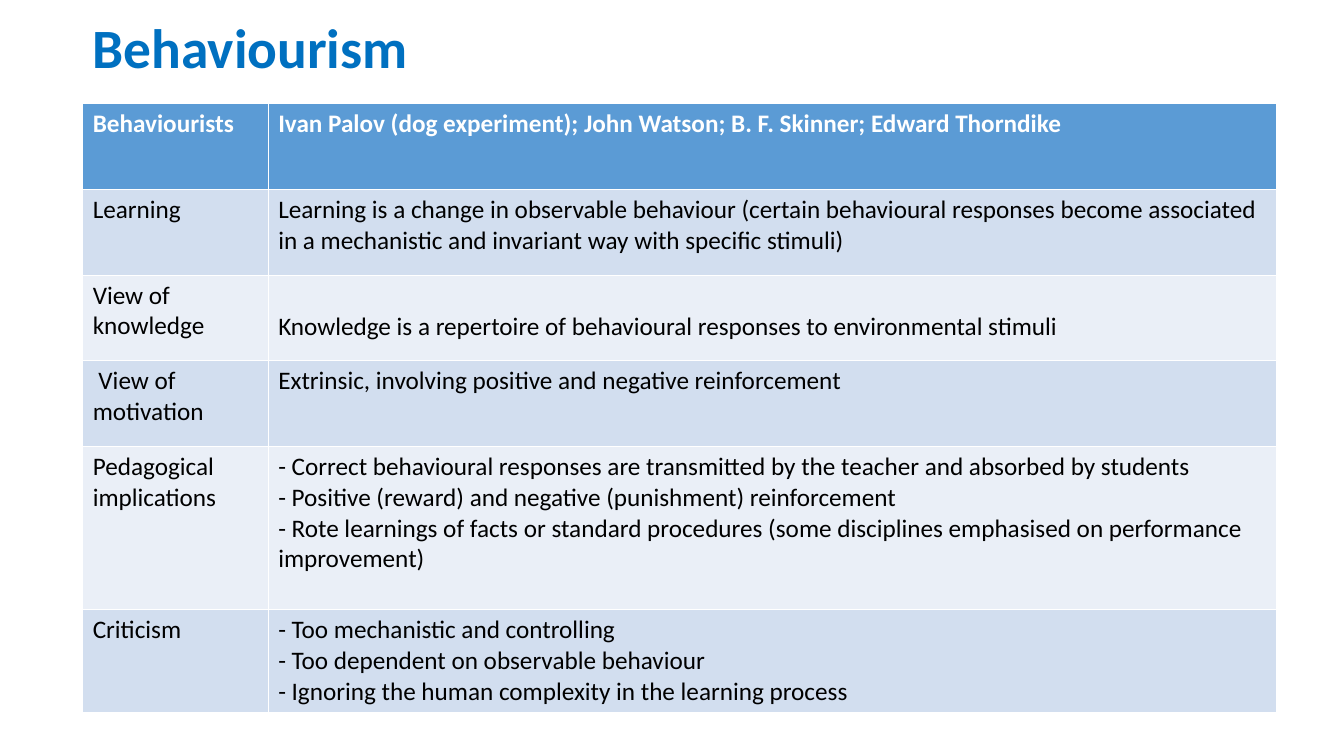
"""Build the Behaviourism summary slide with its two-column table."""
import pptx
import pptx.dml.color
import pptx.enum.text
import pptx.util

RGBColor = pptx.dml.color.RGBColor
Inches = pptx.util.Inches

TITLE = "Behaviourism"
ROWS = [
    ("Behaviourists", ["Ivan Palov (dog experiment); John Watson; B. F. Skinner; Edward Thorndike"]),
    ("Learning", ["Learning is a change in observable behaviour (certain behavioural responses "
                  "become associated in a mechanistic and invariant way with specific stimuli)"]),
    ("View of knowledge", ["Knowledge is a repertoire of behavioural responses to environmental stimuli"]),
    (" View of motivation", ["Extrinsic, involving positive and negative reinforcement"]),
    ("Pedagogical implications", [
        "- Correct behavioural responses are transmitted by the teacher and absorbed by students",
        "- Positive (reward) and negative (punishment) reinforcement",
        "- Rote learnings of facts or standard procedures (some disciplines emphasised on "
        "performance improvement)"]),
    ("Criticism", [
        "- Too mechanistic and controlling",
        "- Too dependent on observable behaviour",
        "- Ignoring the human complexity in the learning process"]),
]

TITLE_BLUE = RGBColor(0x00, 0x70, 0xC0)
HEADER_BLUE = RGBColor(0x5B, 0x9B, 0xD5)
BANDS = (RGBColor(0xEA, 0xEF, 0xF7), RGBColor(0xD2, 0xDE, 0xEF))
WHITE = RGBColor(0xFF, 0xFF, 0xFF)
BLACK = RGBColor(0x00, 0x00, 0x00)

SLIDE_SIZE = (13.33, 7.5)
LEFT = 0.82
TITLE_BOX = (LEFT, 0.2, 11.5, 0.61)
TABLE_TOP = 1.03
COLUMN_WIDTHS = (1.84, 10)
ROW_HEIGHTS = [0.85] * 4 + [1.62, 1.02]
KNOWLEDGE_CELL = (2, 1)
KNOWLEDGE_MARGIN = 0.36

TITLE_FONT = {"name": "Calibri", "size": pptx.util.Pt(39.6), "bold": True}
HEADER_FONT = {"name": "Calibri", "size": pptx.util.Pt(18), "bold": True}
BODY_FONT = {**HEADER_FONT, "bold": False}


def format_text(text_frame, settings, color):
    for paragraph in text_frame.paragraphs:
        for run in paragraph.runs:
            for name, value in settings.items():
                setattr(run.font, name, value)
            run.font.color.rgb = color


def add_title(slide):
    text_frame = slide.shapes.add_textbox(*map(Inches, TITLE_BOX)).text_frame
    text_frame.word_wrap = True
    text_frame.vertical_anchor = pptx.enum.text.MSO_ANCHOR.MIDDLE
    text_frame.text = TITLE
    text_frame.paragraphs[0].line_spacing = 0.9
    format_text(text_frame, TITLE_FONT, TITLE_BLUE)


def add_summary_table(slide):
    box = (LEFT, TABLE_TOP, sum(COLUMN_WIDTHS), sum(ROW_HEIGHTS))
    table = slide.shapes.add_table(len(ROWS), len(COLUMN_WIDTHS), *map(Inches, box)).table
    for column, width in zip(table.columns, COLUMN_WIDTHS):
        column.width = Inches(width)
    for index, (label, lines) in enumerate(ROWS):
        table.rows[index].height = Inches(ROW_HEIGHTS[index])
        header = index == 0
        for position, text in enumerate((label, "\n".join(lines))):
            cell = table.cell(index, position)
            cell.text_frame.text = text
            cell.fill.solid()
            cell.fill.fore_color.rgb = HEADER_BLUE if header else BANDS[index % 2]
            format_text(cell.text_frame, HEADER_FONT if header else BODY_FONT,
                        WHITE if header else BLACK)
    table.cell(*KNOWLEDGE_CELL).margin_top = Inches(KNOWLEDGE_MARGIN)


def main():
    presentation = pptx.Presentation()
    presentation.slide_width, presentation.slide_height = map(Inches, SLIDE_SIZE)
    slide = presentation.slides.add_slide(presentation.slide_layouts[6])
    add_title(slide)
    add_summary_table(slide)
    presentation.save("out.pptx")


if __name__ == "__main__":
    main()
